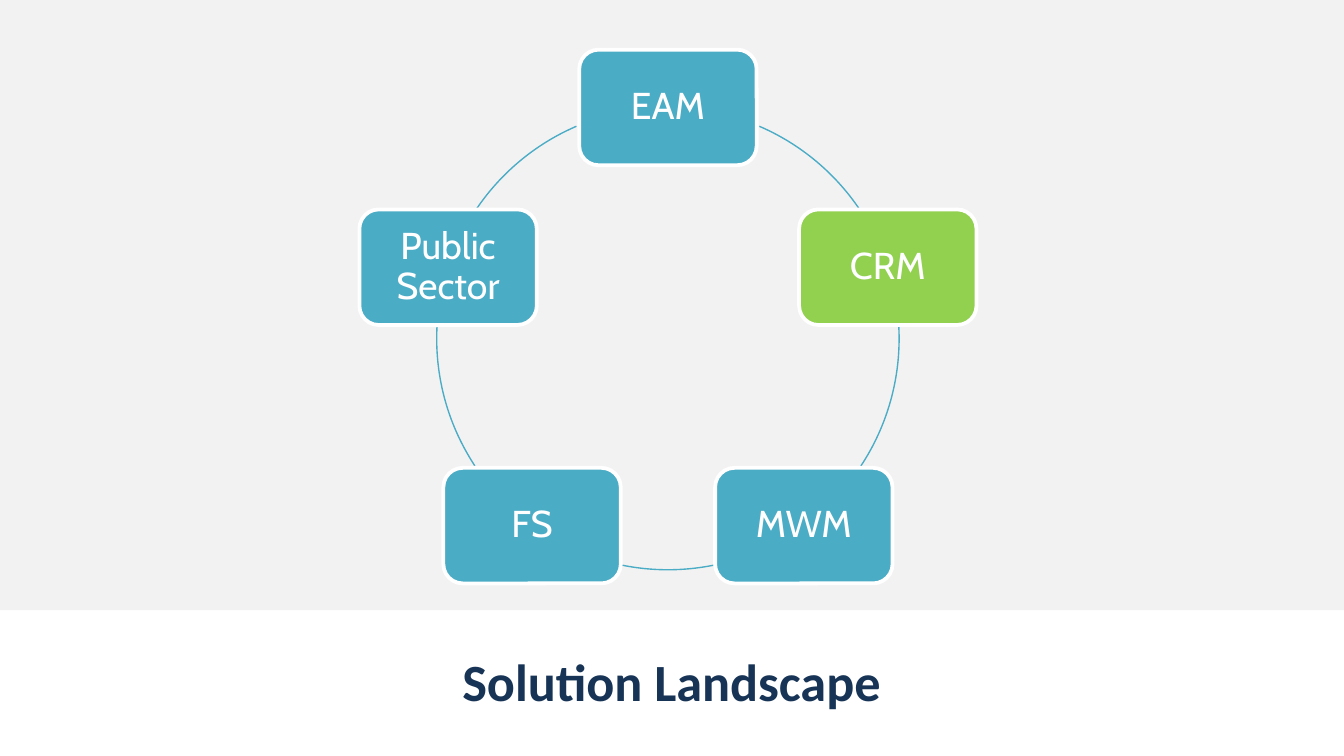
from math import cos, radians, sin

from pptx import Presentation
from pptx.dml.color import RGBColor
from pptx.enum.shapes import MSO_SHAPE
from pptx.enum.text import MSO_ANCHOR, PP_ALIGN
from pptx.util import Inches, Pt

RECTANGLE = MSO_SHAPE.RECTANGLE
ROUNDED = MSO_SHAPE.ROUNDED_RECTANGLE
ARC = MSO_SHAPE.ARC
CENTER = PP_ALIGN.CENTER
TOP = MSO_ANCHOR.TOP
MIDDLE = MSO_ANCHOR.MIDDLE

WHITE = RGBColor(0xFF, 0xFF, 0xFF)
GRAY = RGBColor(0xF2, 0xF2, 0xF2)
TEAL = RGBColor(0x4B, 0xAC, 0xC6)
GREEN = RGBColor(0x92, 0xD0, 0x50)
NAVY = RGBColor(0x17, 0x34, 0x56)

TITLE = "Solution Landscape"
# Clockwise from the top: label, fill
SOLUTIONS = [
    ("EAM", TEAL),
    ("CRM", GREEN),
    ("MWM", TEAL),
    ("FS", TEAL),
    ("Public Sector", TEAL),
]
# Visible pieces of the ring, in degrees clockwise from the right
ARCS = [(293.3, 325.7), (357, 33.4), (78.6, 101.4), (146.6, 183), (214.3, 246.7)]

SLIDE_WIDTH = 10
SLIDE_HEIGHT = SLIDE_WIDTH * 9 / 16
CENTER_X, CENTER_Y, RADIUS = 4.97, 2.52, 1.72
NODE_WIDTH, NODE_HEIGHT = 1.32, 0.86
ARC_UNITS_PER_DEGREE = 0.6  # 60000 per degree, scaled down by 100000


def add_shape(page, kind, left, top, width, height, fill=None, line=None, weight=1):
    shape = page.shapes.add_shape(
        kind, Inches(left), Inches(top), Inches(width), Inches(height))
    shape.shadow.inherit = False
    if fill is None:
        shape.fill.background()
    else:
        shape.fill.solid()
        shape.fill.fore_color.rgb = fill
    if line is None:
        shape.line.fill.background()
    else:
        shape.line.color.rgb = line
        shape.line.width = Pt(weight)
    return shape


def write_text(box, text, *, font, size, color, bold=False, anchor=MIDDLE,
               margin=0.05, spacing=1.0):
    frame = box.text_frame
    frame.word_wrap = True
    frame.vertical_anchor = anchor
    frame.margin_left = frame.margin_right = Inches(margin)
    frame.margin_top = frame.margin_bottom = Inches(margin)
    para = frame.paragraphs[0]
    para.alignment = CENTER
    para.line_spacing = spacing
    span = para.add_run()
    span.text = text
    span.font.name = font
    span.font.size = Pt(size)
    span.font.bold = bold
    span.font.color.rgb = color


def main():
    deck = Presentation()
    deck.slide_width, deck.slide_height = Inches(SLIDE_WIDTH), Inches(SLIDE_HEIGHT)
    page = deck.slides.add_slide(deck.slide_layouts[6])

    add_shape(page, RECTANGLE, 0, 0, SLIDE_WIDTH, 4.54, fill=GRAY)
    title = page.shapes.add_textbox(
        Inches(2.24), Inches(4.78), Inches(5.51), Inches(0.63))
    write_text(title, TITLE, font="Calibri", size=28, color=NAVY, bold=True, anchor=TOP)

    for start, end in ARCS:
        arc = add_shape(page, ARC, CENTER_X - RADIUS, CENTER_Y - RADIUS,
                        2 * RADIUS, 2 * RADIUS, line=TEAL, weight=0.75)
        arc.adjustments[0] = start * ARC_UNITS_PER_DEGREE
        arc.adjustments[1] = end * ARC_UNITS_PER_DEGREE

    for index, (label, fill) in enumerate(SOLUTIONS):
        angle = radians(360 / len(SOLUTIONS) * index - 90)
        left = CENTER_X + RADIUS * cos(angle) - NODE_WIDTH / 2
        top = CENTER_Y + RADIUS * sin(angle) - NODE_HEIGHT / 2
        node = add_shape(page, ROUNDED, left, top, NODE_WIDTH, NODE_HEIGHT,
                         fill=fill, line=WHITE, weight=2)
        write_text(node, label, font="Cabin", size=20, color=WHITE,
                   margin=0.08, spacing=0.9)

    deck.save("out.pptx")


if __name__ == "__main__":
    main()
